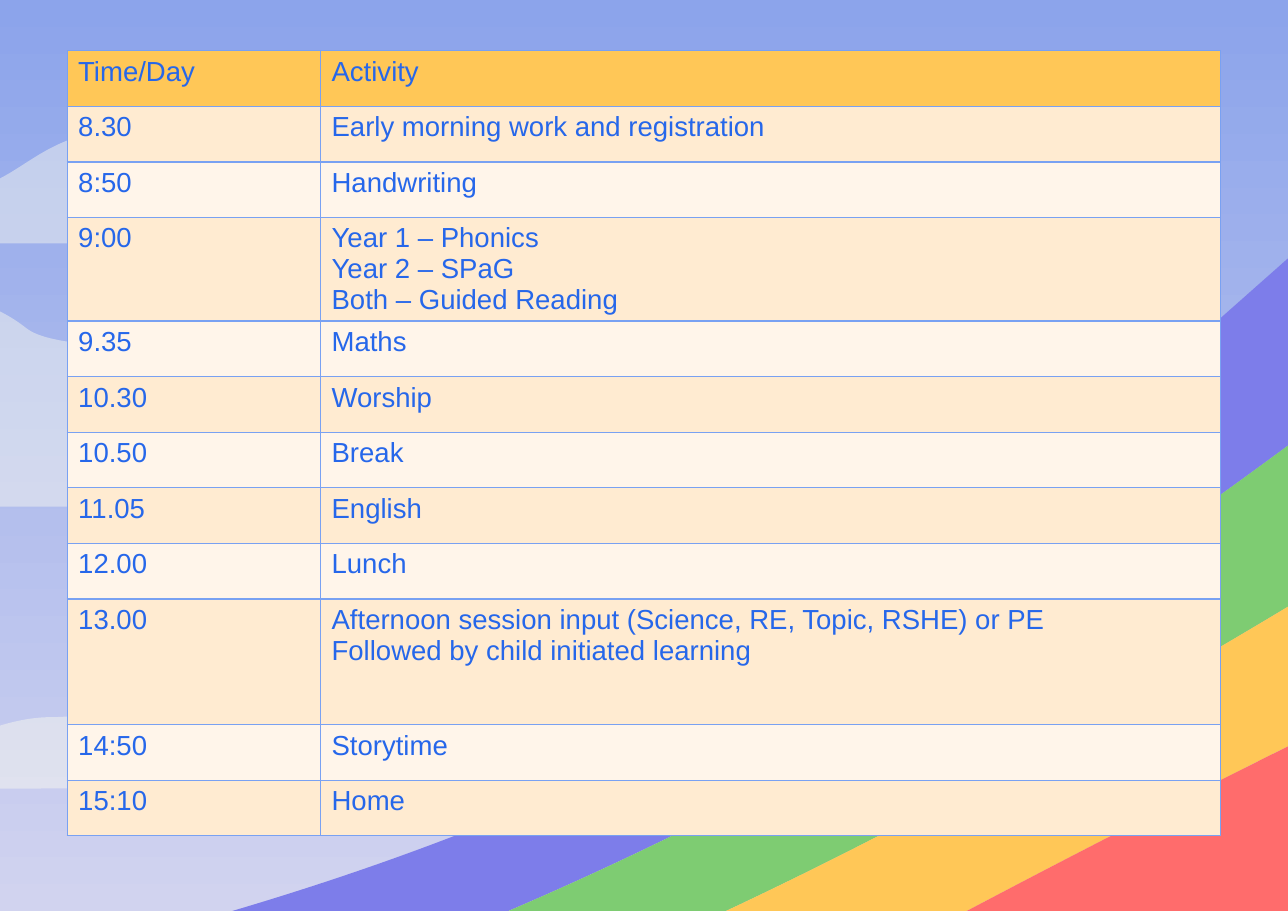
from dataclasses import dataclass

from lxml.etree import Element, SubElement
from pptx import Presentation
from pptx.dml.color import RGBColor
from pptx.oxml.ns import qn
from pptx.slide import Slide
from pptx.table import _Cell as Cell
from pptx.util import Emu, Pt

SCALE = 9144  # EMU in one px, 100 px to the inch

BLUE = RGBColor(0x26, 0x67, 0xEA)
LINE = RGBColor(0x79, 0xA1, 0xF2)
PEACH = RGBColor(0xFF, 0xEB, 0xD1)
CREAM = RGBColor(0xFF, 0xF5, 0xEA)
CLOUD = RGBColor(0xFC, 0xFC, 0xF0)
DUSK = RGBColor(0xD1, 0xD3, 0xEF)
SKY = RGBColor(0x8C, 0xA4, 0xEB)
PURPLE = RGBColor(0x7D, 0x7D, 0xEA)
GREEN = RGBColor(0x7E, 0xCC, 0x72)
GOLD = RGBColor(0xFF, 0xC7, 0x57)
RED = RGBColor(0xFF, 0x6C, 0x6C)

Curve = list[tuple[int, int]]  # a start, then two handles and an end for each bend


@dataclass
class Entry:
    time: str
    task: str
    high: int = 0  # px, or 0 for an equal share


CLOUDS: list[Curve] = [
    [(496, 460), (496, 460), (487, 447), (407, 371),
     (326, 295), (68, 333), (24, 298), (-3, 277), (-26, 272), (-48, 272),
     (-71, 272), (-93, 278), (-118, 278), (-149, 278), (-183, 269), (-230, 229),
     (-251, 211), (-271, 204), (-289, 204), (-323, 204), (-351, 228), (-371, 254),
     (-400, 292), (-435, 324), (-476, 348), (-572, 405), (-564, 460), (-564, 460)],
    [(683, 715), (683, 715), (647, 678), (594, 678),
     (546, 678), (476, 642), (421, 599), (405, 585), (390, 581), (374, 581),
     (339, 581), (302, 606), (236, 606), (142, 606), (121, 651), (47, 651),
     (-26, 651), (-104, 716), (-104, 716)],
    [(620, 221), (620, 221), (605, 139), (509, 139),
     (427, 139), (380, 113), (325, 78), (300, 62), (282, 56), (267, 56),
     (220, 56), (208, 116), (130, 116), (27, 116), (23, 172), (-47, 174),
     (-118, 176), (-141, 221), (-141, 221)],
]

# Rainbow edges from the outside in; each band lies between two of them
EDGES: list[Curve] = [
    [(1758, -286), (1758, -286), (1353, 71), (881, 490),
     (409, 909), (-557, 966), (-557, 966)],
    [(1767, -70), (1767, -70), (1086, 513), (679, 724),
     (263, 940), (-148, 1042), (-552, 1077)],
    [(1777, 153), (1777, 153), (1058, 672), (499, 897),
     (-77, 1130), (-544, 1258), (-544, 1258)],
    [(1787, 384), (1787, 384), (1242, 628), (773, 883),
     (304, 1137), (-290, 1383), (-537, 1428)],
    [(1802, 724), (1802, 724), (977, 926), (556, 1102),
     (134, 1278), (-251, 1598), (-527, 1656)],
]
BANDS = [PURPLE, GREEN, GOLD, RED]

ENTRIES = [
    Entry("Time/Day", "Activity"),
    Entry("8.30", "Early morning work and registration"),
    Entry("8:50", "Handwriting"),
    Entry("9:00", "Year 1 – Phonics\nYear 2 – SPaG\nBoth – Guided Reading", 94),
    Entry("9.35", "Maths"),
    Entry("10.30", "Worship"),
    Entry("10.50", "Break"),
    Entry("11.05", "English"),
    Entry("12.00", "Lunch"),
    Entry("13.00", "Afternoon session input (Science, RE, Topic, RSHE) or PE\n"
                   "Followed by child initiated learning", 114),
    Entry("14:50", "Storytime"),
    Entry("15:10", "Home"),
]
LEFT, TOP, HIGH = 61, 46, 713
COLS = [230, 817]


def px(size: float) -> Emu:
    return Emu(round(size * SCALE))


def draw(slide: Slide, curves: list[Curve], color: RGBColor, alpha: int = 100) -> None:
    """Fill the area inside the curves, joined end to start by straight lines."""
    dots = [(px(x), px(y)) for curve in curves for x, y in curve]
    pen = slide.shapes.build_freeform(*dots[0])
    pen.add_line_segments(dots[1:], close=True)
    shape = pen.convert_to_shape()
    shape.shadow.inherit = False
    shape.line.fill.background()
    shape.fill.solid()
    shape.fill.fore_color.rgb = color
    if alpha < 100:
        tint = shape.fill._xPr.find(qn("a:solidFill"))[0]
        SubElement(tint, qn("a:alpha"), val=str(alpha * 1000))

    # Join every three points after a start into one bend
    route = next(shape._element.iter(qn("a:path")))
    steps = list(route)
    first = 0
    for curve in curves:
        for i in range(first + 1, first + len(curve), 3):
            bend = Element(qn("a:cubicBezTo"))
            steps[i].addprevious(bend)
            for step in steps[i:i + 3]:
                bend.append(step[0])
                route.remove(step)
        first += len(curve)


def frame(cell: Cell) -> None:
    props = cell._tc.get_or_add_tcPr()
    for side in ("lnL", "lnR", "lnT", "lnB"):
        edge = SubElement(props, qn(f"a:{side}"), w=str(Pt(1)))
        fill = SubElement(edge, qn("a:solidFill"))
        SubElement(fill, qn("a:srgbClr"), val=str(LINE))


def write(cell: Cell, text: str, color: RGBColor) -> None:
    frame(cell)
    cell.fill.solid()
    cell.fill.fore_color.rgb = color
    cell.text_frame.text = text
    for para in cell.text_frame.paragraphs:
        for run in para.runs:
            run.font.name = "Arial"
            run.font.size = Pt(18)
            run.font.bold = False
            run.font.color.rgb = BLUE


def plan(slide: Slide) -> None:
    table = slide.shapes.add_table(len(ENTRIES), len(COLS), px(LEFT), px(TOP),
                                   px(sum(COLS)), px(HIGH)).table
    table.first_row = table.horz_banding = False
    for col, wide in zip(table.columns, COLS):
        col.width = px(wide)
    tall = [entry.high for entry in ENTRIES if entry.high]
    share = (HIGH - sum(tall)) / (len(ENTRIES) - len(tall))
    for i, entry in enumerate(ENTRIES):
        table.rows[i].height = px(entry.high or share)
        color = GOLD if i == 0 else PEACH if i % 2 else CREAM
        write(table.cell(i, 0), entry.time, color)
        write(table.cell(i, 1), entry.task, color)


def main() -> None:
    deck = Presentation()
    deck.slide_width, deck.slide_height = px(1169), px(827)
    slide = deck.slides.add_slide(deck.slide_layouts[6])

    # Sky, pale at the bottom
    back = slide.background.fill
    back.gradient()
    back.gradient_angle = 90
    for stop, color, place in zip(back.gradient_stops, (DUSK, SKY), (0, 1)):
        stop.color.rgb = color
        stop.position = place

    # Clouds and rainbow
    for cloud in CLOUDS:
        draw(slide, [cloud], CLOUD, 45)
    for outer, inner, color in zip(EDGES, EDGES[1:], BANDS):
        draw(slide, [outer, inner[::-1]], color)

    # Timetable
    plan(slide)
    deck.save("out.pptx")


if __name__ == "__main__":
    main()
